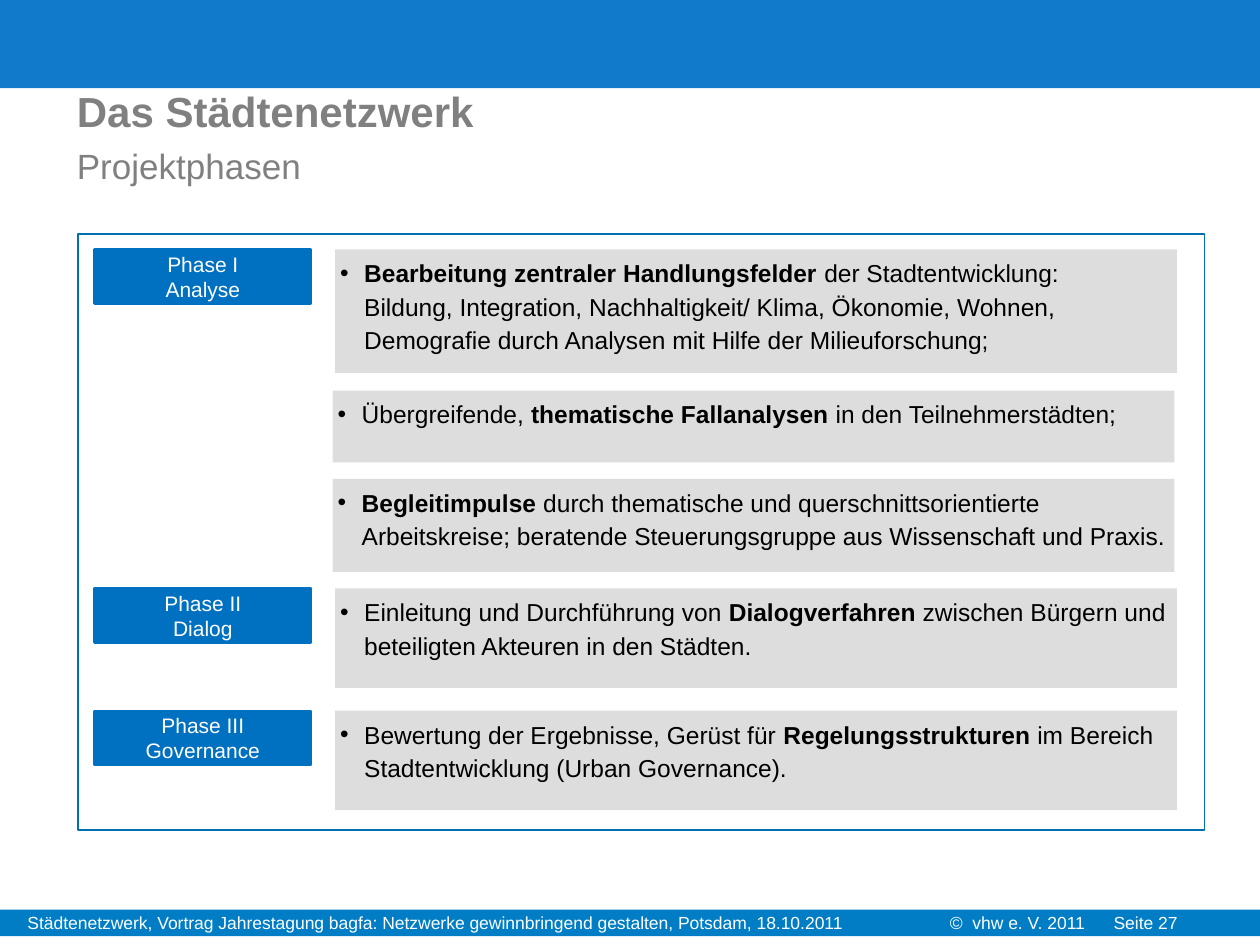
"""Build the slide on the project phases of the Städtenetzwerk."""
from lxml.etree import SubElement
from pptx import Presentation
from pptx.dml.color import RGBColor
from pptx.enum.shapes import MSO_SHAPE
from pptx.enum.text import MSO_ANCHOR, MSO_AUTO_SIZE, PP_ALIGN
from pptx.oxml.ns import qn
from pptx.util import Inches, Pt

THEME = {
    "font": "Arial",
    "header": "117ACB", "footer": "007DC5", "frame": "006FB4", "phase": "0070C0",
    "card": "595959", "card_alpha": 20, "heading": "808080", "text": "000000", "white": "FFFFFF",
    "title_size": 24, "subtitle_size": 20, "card_size": 14, "phase_size": 12, "footer_size": 10,
}

TITLE = [("Das Städtenetzwerk", "title_size", True), ("Projektphasen", "subtitle_size", False)]
FOOTERS = [
    (0.12, 8.03, "Städtenetzwerk, Vortrag Jahrestagung bagfa: Netzwerke gewinnbringend gestalten, "
                 "Potsdam, 18.10.2011", []),
    (7.44, 2.44, "©\tvhw e. V. 2011\tSeite 27", [0.18, 1.3]),
]
ROWS = [
    {"top": 1.98, "height": 0.98, "phase": ["Phase I", "Analyse"], "runs": [
        ("Bearbeitung zentraler Handlungsfelder ", True),
        ("der Stadtentwicklung: ", False),
        ("\n", False),
        ("Bildung, Integration, Nachhaltigkeit/ Klima, Ökonomie, Wohnen, Demografie durch "
         "Analysen mit Hilfe der Milieuforschung;", False)]},
    {"top": 3.1, "height": 0.57, "phase": None, "runs": [
        ("Übergreifende, ", False),
        ("thematische Fallanalysen ", True),
        ("in den Teilnehmerstädten;", False)]},
    {"top": 3.8, "height": 0.74, "phase": None, "runs": [
        ("Begleitimpulse", True),
        (" durch thematische und querschnittsorientierte Arbeitskreise; beratende "
         "Steuerungsgruppe aus Wissenschaft und Praxis.", False)]},
    {"top": 4.67, "height": 0.79, "phase": ["Phase II", "Dialog"], "runs": [
        ("Einleitung und Durchführung von ", False),
        ("Dialogverfahren", True),
        (" zwischen Bürgern und beteiligten Akteuren in den Städten.", False)]},
    {"top": 5.64, "height": 0.79, "phase": ["Phase III", "Governance"], "runs": [
        ("Bewertung der Ergebnisse, Gerüst für ", False),
        ("Regelungsstrukturen", True),
        (" im Bereich Stadtentwicklung (Urban Governance).", False)]},
]


def color(name):
    return RGBColor.from_string(THEME[name])


def style(p, size, tint, bold=False):
    for r in p.runs:
        r.font.name = THEME["font"]
        r.font.size = Pt(THEME[size])
        r.font.color.rgb = color(tint)
        r.font.bold = bold


def add_rect(s, box, fill=None, line=None, width=1):
    sp = s.shapes.add_shape(MSO_SHAPE.RECTANGLE, *map(Inches, box))
    sp.shadow.inherit = False
    if fill:
        sp.fill.solid()
        sp.fill.fore_color.rgb = color(fill)
    else:
        sp.fill.background()
    if line:
        sp.line.color.rgb = color(line)
        sp.line.width = Pt(width)
    else:
        sp.line.fill.background()
    return sp


def prepare_text(sp, anchor):
    tf = sp.text_frame
    tf.word_wrap = True
    tf.vertical_anchor = anchor
    tf.margin_left = tf.margin_right = tf.margin_top = tf.margin_bottom = Inches(0.04)
    return tf


def add_title(s):
    sp = s.shapes.title
    sp.left, sp.top, sp.width, sp.height = map(Inches, (0.51, 0.63, 6.72, 1.1))
    tf = sp.text_frame
    tf.auto_size = MSO_AUTO_SIZE.NONE
    tf.vertical_anchor = MSO_ANCHOR.TOP
    tf.text = "\n".join(text for text, _, _ in TITLE)
    for p, (_, size, bold) in zip(tf.paragraphs, TITLE):
        p.alignment = PP_ALIGN.LEFT
        style(p, size, "heading", bold)
    tf.paragraphs[-1].space_before = Pt(5)


def add_footer(s, left, width, text, tabs):
    sp = s.shapes.add_textbox(*map(Inches, (left, 7.19, width, 0.27)))
    tf = sp.text_frame
    tf.word_wrap = True
    tf.text = text
    p = tf.paragraphs[0]
    if tabs:
        tab_list = SubElement(p._p.get_or_add_pPr(), qn("a:tabLst"))
        for pos in tabs:
            SubElement(tab_list, qn("a:tab"), pos=str(Inches(pos)), algn="l")
    style(p, "footer_size", "white")


def add_phase(s, top, lines):
    sp = add_rect(s, (0.75, top, 1.72, 0.43), "phase", "phase", 1.25)
    tf = prepare_text(sp, MSO_ANCHOR.MIDDLE)
    tf.text = "\n".join(lines)
    for p in tf.paragraphs:
        p.alignment = PP_ALIGN.CENTER
        style(p, "phase_size", "white")


def add_card(s, left, top, height, runs):
    sp = add_rect(s, (left, top, 6.68, height), "card")
    tint = sp._element.spPr.find(qn("a:solidFill"))[0]
    SubElement(tint, qn("a:alpha"), val=str(THEME["card_alpha"] * 1000))
    p = prepare_text(sp, MSO_ANCHOR.TOP).paragraphs[0]
    p.alignment = PP_ALIGN.LEFT
    p.line_spacing = Pt(19)
    props = p._p.get_or_add_pPr()
    props.set("marL", str(Inches(0.19)))
    props.set("indent", str(-Inches(0.19)))
    SubElement(props, qn("a:buFont"), typeface=THEME["font"])
    SubElement(props, qn("a:buChar"), char="•")
    for text, _ in runs:
        if text == "\n":
            p.add_line_break()
        else:
            p.add_run().text = text
    style(p, "card_size", "text")
    for r, bold in zip(p.runs, [bold for text, bold in runs if text != "\n"]):
        r.font.bold = bold


def main():
    prs = Presentation()
    prs.slide_width, prs.slide_height = Inches(10), Inches(7.5)
    s = prs.slides.add_slide(prs.slide_layouts[5])
    add_rect(s, (0, 0, 10, 0.7), "header")
    add_rect(s, (0, 7.22, 10, 0.21), "footer")
    for footer in FOOTERS:
        add_footer(s, *footer)
    add_title(s)
    add_rect(s, (0.62, 1.86, 8.94, 4.73), line="frame")
    for row in ROWS:
        if row["phase"]:
            add_phase(s, row["top"], row["phase"])
        add_card(s, 2.66 if row["phase"] else 2.64, row["top"], row["height"], row["runs"])
    prs.save("out.pptx")


if __name__ == "__main__":
    main()
